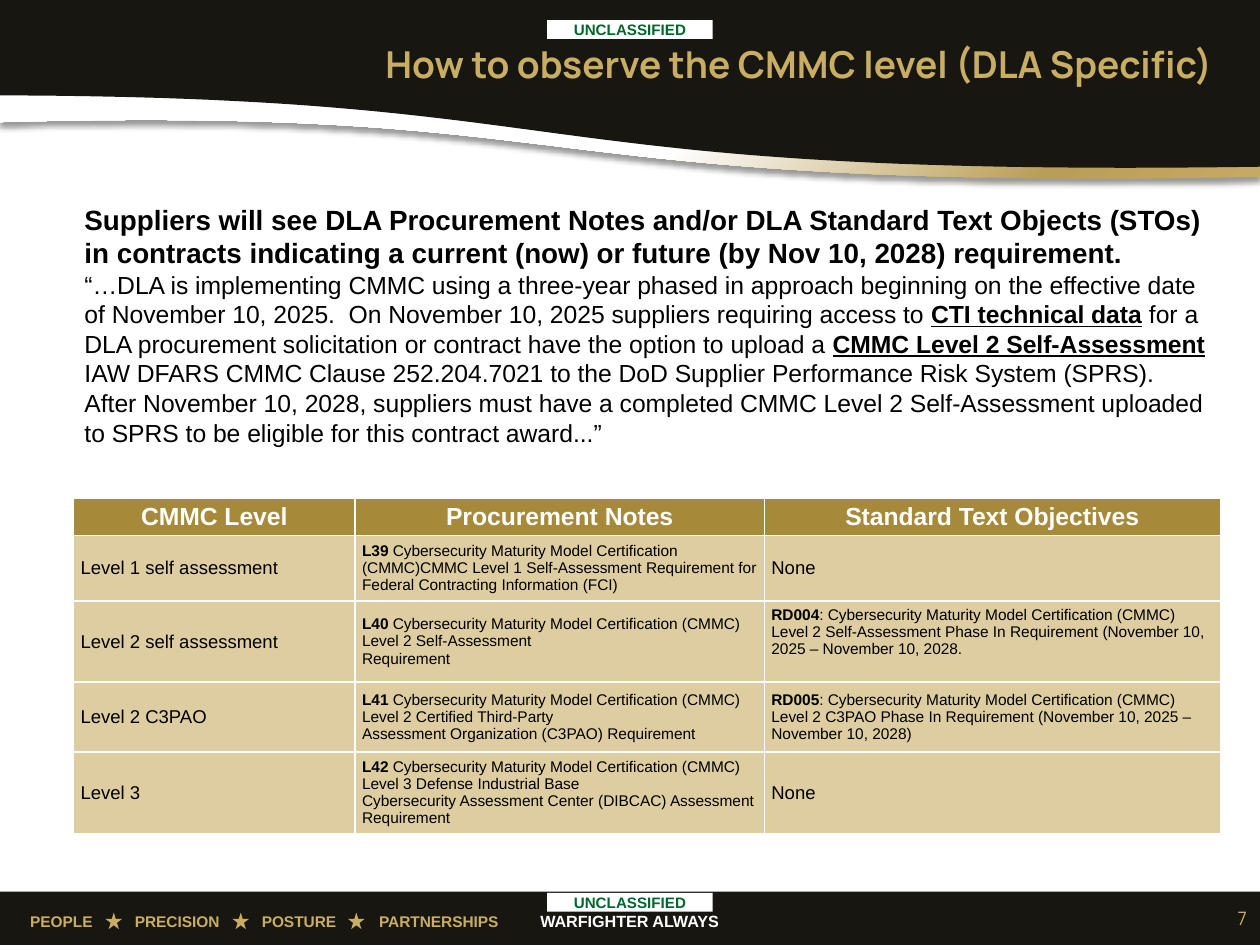
from lxml.etree import SubElement
from pptx import Presentation
from pptx.dml.color import RGBColor
from pptx.enum.shapes import MSO_SHAPE as Preset
from pptx.enum.text import MSO_ANCHOR as Anchor, PP_ALIGN as Align
from pptx.oxml import parse_xml
from pptx.oxml.ns import nsdecls, qn
from pptx.util import Cm, Pt

WIDTH, HEIGHT = 28.78, 21.59
BLACK, WHITE, GOLD, GREEN = "171610", "FFFFFF", "C9AD62", "00662E"
HEADER_FILL, BODY_FILL = "A68939", "DECDA0"
INSETS = (0.25, 0.13, 0.25, 0.13)

BODY = [
    "*Suppliers will see DLA Procurement Notes and/or DLA Standard Text Objects (STOs) in contracts "
    "indicating a current (now) or future (by Nov 10, 2028) requirement.*",
    "“…DLA is implementing CMMC using a three-year phased in approach beginning on the effective date "
    "of November 10, 2025.  On November 10, 2025 suppliers requiring access to *CTI technical data* "
    "for a DLA procurement solicitation or contract have the option to upload a "
    "*CMMC Level 2 Self-Assessment* IAW DFARS CMMC Clause 252.204.7021 to the DoD Supplier "
    "Performance Risk System (SPRS).  After November 10, 2028, suppliers must have a completed CMMC "
    "Level 2 Self-Assessment uploaded to SPRS to be eligible for this contract award...”",
]
MODEL = "Cybersecurity Maturity Model Certification (CMMC)"
LEVELS = [
    ["CMMC Level", "Procurement Notes", "Standard Text Objectives"],
    ["Level 1 self assessment",
     f"*L39* {MODEL}CMMC Level 1 Self-Assessment Requirement for Federal Contracting Information (FCI)",
     "None"],
    ["Level 2 self assessment",
     f"*L40* {MODEL} Level 2 Self-Assessment\nRequirement",
     f"*RD004*: {MODEL} Level 2 Self-Assessment Phase In Requirement "
     "(November 10, 2025 – November 10, 2028."],
    ["Level 2 C3PAO",
     f"*L41* {MODEL} Level 2 Certified Third-Party\nAssessment Organization (C3PAO) Requirement",
     f"*RD005*: {MODEL} Level 2 C3PAO Phase In Requirement (November 10, 2025 – November 10, 2028)"],
    ["Level 3",
     f"*L42* {MODEL} Level 3 Defense Industrial Base\n"
     "Cybersecurity Assessment Center (DIBCAC) Assessment Requirement",
     "None"],
]
COLUMN_WIDTHS = [6.43, 9.35, 10.41]
ROW_HEIGHTS = [0.85, 1.5, 1.83, 1.6, 1.83]
VALUES = [(0.69, "PEOPLE"), (3.08, "PRECISION"), (5.98, "POSTURE"), (8.66, "PARTNERSHIPS")]
STARS = [2.41, 5.31, 7.95]


def rgb(color):
    return RGBColor.from_string(color)


def bezier(start, control_1, control_2, end, steps=60):
    """Return points along a cubic curve."""
    points = []
    for step in range(steps + 1):
        t = step / steps
        weights = ((1 - t) ** 3, 3 * t * (1 - t) ** 2, 3 * t * t * (1 - t), t ** 3)
        points.append(tuple(sum(weight * point[axis] for weight, point in
                                zip(weights, (start, control_1, control_2, end)))
                            for axis in (0, 1)))
    return points


class SlideBuilder:
    def __init__(self, slide, font="Arial"):
        self.slide = slide
        self.font = font

    def fill_text(self, frame, paragraphs, size, color, bold=False, align=Align.LEFT, font=None):
        """Fill a text frame; words between asterisks become bold."""
        for index, content in enumerate(paragraphs):
            paragraph = frame.add_paragraph() if index else frame.paragraphs[0]
            paragraph.alignment = align
            for part, words in enumerate(content.split("*")):
                if not words:
                    continue
                run = paragraph.add_run()
                run.text = words
                run.font.name = font or self.font
                run.font.size = Pt(size)
                run.font.bold = bold or part % 2 == 1
                run.font.color.rgb = rgb(color)

    def set_frame(self, frame, insets, anchor):
        frame.word_wrap = True
        frame.vertical_anchor = anchor
        frame.margin_left, frame.margin_top, frame.margin_right, frame.margin_bottom = map(Cm, insets)

    def text(self, box, paragraphs, size, color, anchor=Anchor.TOP, **style):
        frame = self.slide.shapes.add_textbox(*map(Cm, box)).text_frame
        self.set_frame(frame, INSETS, anchor)
        self.fill_text(frame, paragraphs, size, color, **style)
        return frame

    def shape(self, preset, box, fill):
        shape = self.slide.shapes.add_shape(preset, *map(Cm, box))
        self.paint(shape, fill)
        return shape

    def paint(self, shape, fill):
        shape.shadow.inherit = False
        shape.fill.solid()
        shape.fill.fore_color.rgb = rgb(fill)
        shape.line.fill.background()

    def marking(self, top):
        """Add a classification label."""
        label = self.shape(Preset.RECTANGLE, (12.5, top, 3.78, 0.43), WHITE)
        self.set_frame(label.text_frame, (0, 0, 0, 0), Anchor.MIDDLE)
        self.fill_text(label.text_frame, ["UNCLASSIFIED"], 9.8, GREEN, bold=True, align=Align.CENTER)

    def wave(self, top, curve, fill):
        """Add an area that hangs from a straight top edge down to a curve."""
        points = bezier(*curve)
        builder = self.slide.shapes.build_freeform(Cm(WIDTH), Cm(top))
        builder.add_line_segments([(Cm(0), Cm(top))] + [(Cm(x), Cm(y)) for x, y in points])
        shape = builder.convert_to_shape()
        self.paint(shape, fill)
        return shape

    def gradient_and_shadow(self, shape, stops):
        properties = shape._element.spPr
        colors = "".join(f'<a:gs pos="{position * 1000}"><a:srgbClr val="{color}"/></a:gs>'
                         for position, color in stops)
        gradient = parse_xml(
            f'<a:gradFill {nsdecls("a")} rotWithShape="1"><a:gsLst>{colors}</a:gsLst>'
            '<a:path path="circle"><a:fillToRect r="100000" b="100000"/></a:path></a:gradFill>')
        properties.replace(properties.find(qn("a:solidFill")), gradient)
        shadow = SubElement(properties.find(qn("a:effectLst")), qn("a:outerShdw"),
                            blurRad=str(Pt(4)), dist=str(Pt(3)), dir="5400000",
                            algn="t", rotWithShape="0")
        color = SubElement(shadow, qn("a:srgbClr"), val="000000")
        SubElement(color, qn("a:alpha"), val="40000")

    def table(self, left, top, rows, widths, heights):
        table = self.slide.shapes.add_table(len(rows), len(widths), Cm(left), Cm(top),
                                            Cm(sum(widths)), Cm(sum(heights))).table
        for column, width in zip(table.columns, widths):
            column.width = Cm(width)
        for row_index, (row, height, contents) in enumerate(zip(table.rows, heights, rows)):
            row.height = Cm(height)
            for cell, content in zip(row.cells, contents):
                header = row_index == 0
                cell.fill.solid()
                cell.fill.fore_color.rgb = rgb(HEADER_FILL if header else BODY_FILL)
                cell.vertical_anchor = Anchor.MIDDLE
                cell.margin_left = cell.margin_right = Cm(0.16)
                cell.margin_top = cell.margin_bottom = Cm(0.08)
                size = 16 if header else 10 if "*" in content else 12
                self.fill_text(cell.text_frame, content.split("\n"), size,
                               WHITE if header else "000000", bold=header,
                               align=Align.CENTER if header else Align.LEFT)
        return table


def main():
    presentation = Presentation()
    presentation.slide_width, presentation.slide_height = Cm(WIDTH), Cm(HEIGHT)
    builder = SlideBuilder(presentation.slides.add_slide(presentation.slide_layouts[6]))

    builder.shape(Preset.RECTANGLE, (0, 20.37, WIDTH, HEIGHT - 20.37), BLACK)
    builder.text((11.35, 20.68, 6.07, 0.71), ["WARFIGHTER ALWAYS"], 10.5, WHITE,
                 bold=True, align=Align.CENTER)
    for left, value in VALUES:
        builder.text((left - INSETS[0], 20.7, 3.6, 0.71), [value], 10, GOLD, bold=True)
    for left in STARS:
        builder.shape(Preset.STAR_5_POINT, (left, 20.85, 0.38, 0.38), GOLD)

    ribbon = builder.wave(1.5, ((0, 2.79), (13.94, 2.41), (11.53, 4.37), (WIDTH, 4.04)), WHITE)
    builder.gradient_and_shadow(ribbon, [(0, WHITE), (55, WHITE), (84, "B99E55"), (100, "C7AA61")])
    builder.wave(0, ((0, 2.18), (13.87, 2.21), (11.48, 4.06), (WIDTH, 3.81)), BLACK)

    for top in (0.46, 20.4):
        builder.marking(top)
    builder.text((27.66, 20.4, 1.07, 1.14), ["7"], 12, GOLD, Anchor.MIDDLE,
                 align=Align.RIGHT, font="Manrope")
    builder.text((5.46, 0.94, 22.48, 1.04), ["How to observe the CMMC level (DLA Specific)"],
                 24, GOLD, Anchor.MIDDLE, bold=True, align=Align.RIGHT, font="Manrope")

    body = builder.text((1.68, 4.5, 26.39, 8.97), BODY, 16, "000000")
    lead, quote = body.paragraphs
    lead.runs[0].font.size = Pt(18)
    for run in quote.runs:
        run.font.underline = run.font.bold

    table = builder.table(1.68, 11.38, LEVELS, COLUMN_WIDTHS, ROW_HEIGHTS)
    table.cell(2, 2).margin_bottom = Cm(0.5)
    presentation.save("out.pptx")


if __name__ == "__main__":
    main()
